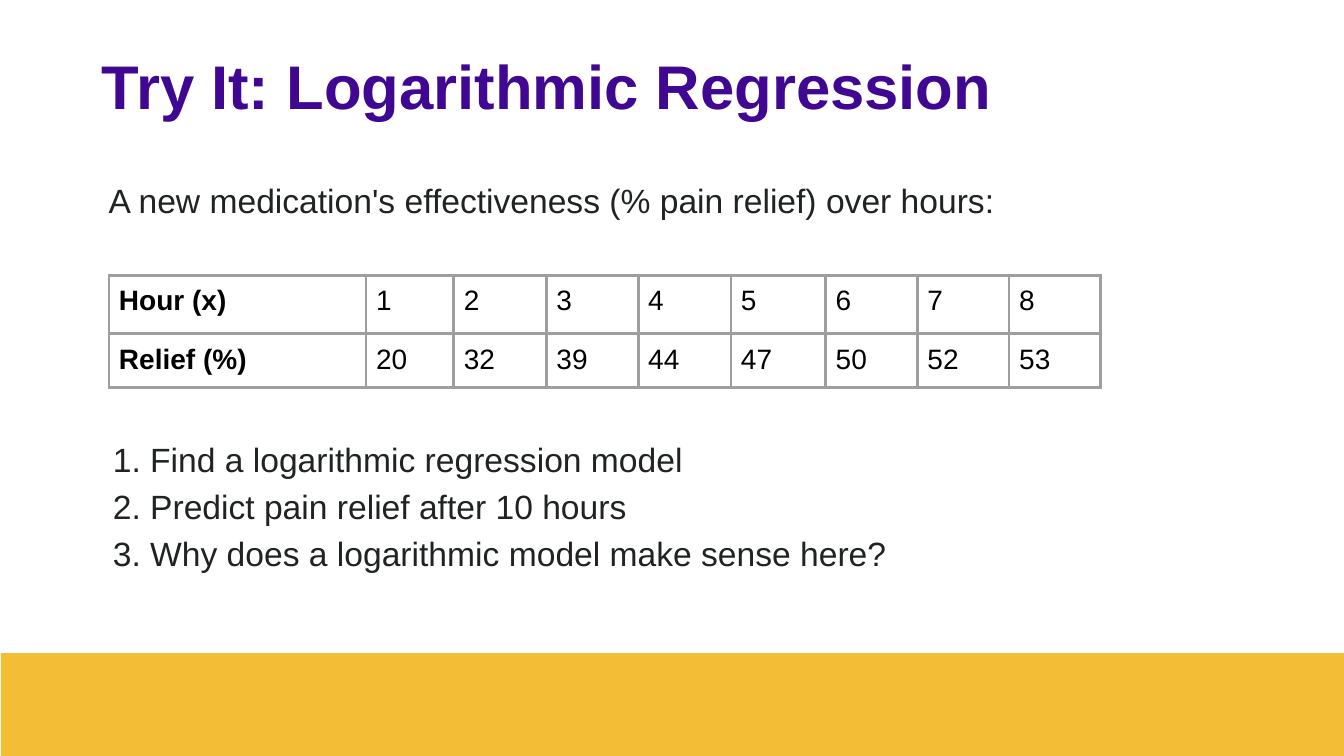
from lxml.etree import SubElement
from pptx import Presentation
from pptx.dml.color import RGBColor
from pptx.enum.shapes import MSO_SHAPE
from pptx.enum.text import MSO_ANCHOR, MSO_AUTO_SIZE, PP_ALIGN
from pptx.oxml.ns import qn
from pptx.util import Inches, Pt

PURPLE = RGBColor(0x40, 0x07, 0x92)
CHARCOAL = RGBColor(0x20, 0x23, 0x24)
BLACK = RGBColor(0x00, 0x00, 0x00)
GRAY = RGBColor(0x9E, 0x9E, 0x9E)
GOLD = RGBColor(0xF3, 0xBE, 0x36)
FONT = "Arial"
GRID = Inches(0.1)
SLIDE_COLUMNS, SLIDE_ROWS = 133.3, 75

TITLE_BOX = (9.1, 5.1, 120.2, 10)
PROMPT_BOX = (9.8, 17.4, 97.9, 5)
TABLE_BOX = (10.8, 27.3, 98.4, 11.1)
TASKS_BOX = (9.1, 41.7, 93.7, 16.7)
BAND_BOX = (0.1, 64.8, SLIDE_COLUMNS, 10.2)

COLUMN_WIDTHS = (25.5, 8.7, 9.2, 9.1, 9.2, 9.4, 9.1, 9.1, 9.1)
ROW_HEIGHTS = (5.8, 5.3)
MEASUREMENTS = (
    ("Hour (x)", 1, 2, 3, 4, 5, 6, 7, 8),
    ("Relief (%)", 20, 32, 39, 44, 47, 50, 52, 53),
)
TASKS = (
    "1. Find a logarithmic regression model",
    "2. Predict pain relief after 10 hours",
    "3. Why does a logarithmic model make sense here?",
)


def on_grid(box):
    """Convert grid units to slide lengths."""
    return [round(length * GRID) for length in box]


def place(shape, box):
    """Move and size a shape to a box on the grid."""
    shape.left, shape.top, shape.width, shape.height = on_grid(box)


def add_run(paragraph, text, size, color, bold=False):
    """Add one formatted run to a paragraph."""
    run = paragraph.add_run()
    run.text = text
    run.font.name = FONT
    run.font.size = Pt(size)
    run.font.bold = bold
    run.font.color.rgb = color


def add_title(slide, box):
    """Fill the title placeholder."""
    title = slide.shapes.title
    place(title, box)
    frame = title.text_frame
    frame.auto_size = MSO_AUTO_SIZE.NONE
    frame.vertical_anchor = MSO_ANCHOR.TOP
    paragraph = frame.paragraphs[0]
    paragraph.alignment = PP_ALIGN.LEFT
    paragraph.line_spacing = 0.9
    add_run(paragraph, "Try It: Logarithmic Regression", 44, PURPLE, True)


def add_prompt(slide, box):
    """Add the sentence that introduces the data."""
    frame = slide.shapes.add_textbox(*on_grid(box)).text_frame
    frame.word_wrap = True
    add_run(
        frame.paragraphs[0],
        "A new medication's effectiveness (% pain relief) over hours:",
        24,
        CHARCOAL,
    )


def add_borders(cell):
    """Draw all four borders of a table cell."""
    properties = cell._tc.get_or_add_tcPr()
    for side in ("lnL", "lnR", "lnT", "lnB"):
        line = SubElement(properties, qn(f"a:{side}"), w=str(Pt(2.25)))
        fill = SubElement(line, qn("a:solidFill"))
        SubElement(fill, qn("a:srgbClr"), val=str(GRAY))


def add_measurements(slide, box):
    """Add the table of hours and pain relief."""
    table = slide.shapes.add_table(
        len(MEASUREMENTS), len(COLUMN_WIDTHS), *on_grid(box)
    ).table
    table.first_row = table.horz_banding = False
    for column, width in zip(table.columns, on_grid(COLUMN_WIDTHS)):
        column.width = width
    for row, height, values in zip(table.rows, on_grid(ROW_HEIGHTS), MEASUREMENTS):
        row.height = height
        for index, (cell, value) in enumerate(zip(row.cells, values)):
            cell.margin_left = cell.margin_right = GRID
            cell.margin_top = cell.margin_bottom = GRID
            add_borders(cell)
            cell.fill.background()
            paragraph = cell.text_frame.paragraphs[0]
            add_run(paragraph, str(value), 20, BLACK, index == 0)


def add_tasks(slide, box):
    """Fill the body placeholder with the numbered tasks."""
    body = slide.placeholders[1]
    place(body, box)
    frame = body.text_frame
    frame.auto_size = MSO_AUTO_SIZE.NONE
    frame.vertical_anchor = MSO_ANCHOR.TOP
    frame.margin_left = frame.margin_right = Inches(0.13)
    frame.margin_top = frame.margin_bottom = Inches(0.13)
    for index, task in enumerate(TASKS):
        paragraph = frame.add_paragraph() if index else frame.paragraphs[0]
        properties = paragraph._p.get_or_add_pPr()
        properties.set("marL", str(Inches(0.08)))
        properties.set("indent", "0")
        SubElement(properties, qn("a:buNone"))
        paragraph.line_spacing = 1.13
        paragraph.space_before = Pt(0)
        paragraph.space_after = Pt(1)
        add_run(paragraph, task, 24, CHARCOAL)


def add_band(slide, box):
    """Add the gold band along the bottom edge."""
    band = slide.shapes.add_shape(MSO_SHAPE.RECTANGLE, *on_grid(box))
    band.shadow.inherit = False
    band.fill.solid()
    band.fill.fore_color.rgb = GOLD
    band.line.fill.background()


def main():
    """Build and save the slide."""
    presentation = Presentation()
    presentation.slide_width, presentation.slide_height = on_grid(
        (SLIDE_COLUMNS, SLIDE_ROWS)
    )
    slide = presentation.slides.add_slide(presentation.slide_layouts[1])
    add_title(slide, TITLE_BOX)
    add_prompt(slide, PROMPT_BOX)
    add_measurements(slide, TABLE_BOX)
    add_tasks(slide, TASKS_BOX)
    add_band(slide, BAND_BOX)
    presentation.save("out.pptx")


if __name__ == "__main__":
    main()
